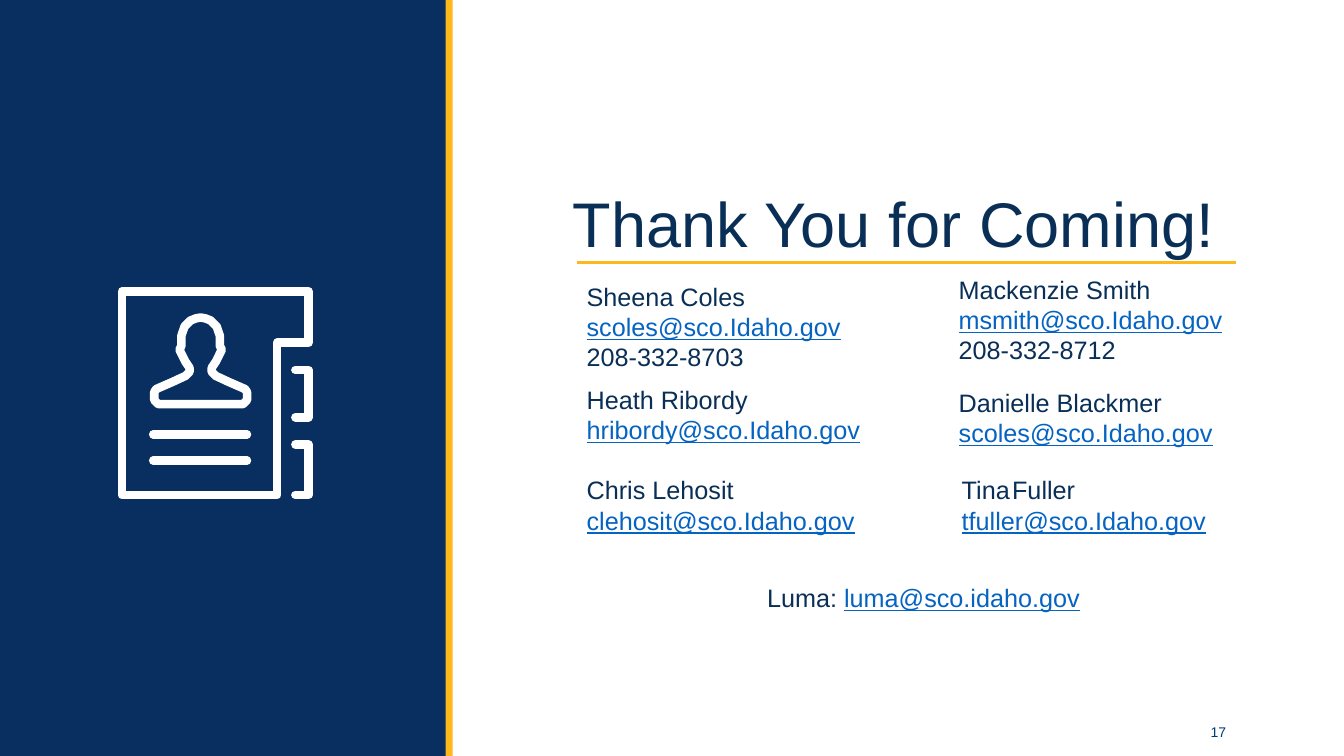
import dataclasses

import lxml.etree
import pptx
import pptx.dml.color
import pptx.enum.shapes
import pptx.enum.text
import pptx.oxml.ns
import pptx.util

Inches = pptx.util.Inches
Pt = pptx.util.Pt
qn = pptx.oxml.ns.qn


@dataclasses.dataclass(frozen=True)
class Theme:
    font: str = "Arial"
    panel: str = "092F61"
    gold: str = "FFB81C"
    ink: str = "092F57"
    email: str = "0563C1"
    number: str = "003B79"
    white: str = "FFFFFF"
    title_size: float = 45
    contact_size: float = 18
    number_size: float = 10
    rule_width: float = 2.25
    icon_stroke: float = 6.1


THEME = Theme()

CONTACTS = [
    ((5.72, 2.74, 3.12, 1.01), ["Sheena Coles", "scoles@sco.Idaho.gov", "208-332-8703"]),
    ((9.41, 2.67, 2.99, 1.01), ["Mackenzie Smith", "msmith@sco.Idaho.gov", "208-332-8712"]),
    ((5.72, 3.76, 3.12, 1.01), ["Heath Ribordy", "hribordy@sco.Idaho.gov"]),
    ((9.41, 3.79, 3.12, 1.01), ["Danielle Blackmer", "scoles@sco.Idaho.gov"]),
    ((5.72, 4.66, 3.12, 1.01), ["Chris Lehosit", "clehosit@sco.Idaho.gov"]),
    ((9.44, 4.66, 3.12, 1.01), ["Tina\tFuller", "tfuller@sco.Idaho.gov"]),
    ((7.51, 5.73, 3.36, 0.4), ["Luma: luma@sco.idaho.gov"]),
]


def rgb(value):
    return pptx.dml.color.RGBColor.from_string(value)


def style(font, size, color):
    font.name = THEME.font
    font.size = Pt(size)
    font.color.rgb = rgb(color)


def add_band(slide, box, color):
    band = slide.shapes.add_shape(
        pptx.enum.shapes.MSO_SHAPE.RECTANGLE, *map(Inches, box))
    band.shadow.inherit = False
    band.fill.solid()
    band.fill.fore_color.rgb = rgb(color)
    band.line.fill.background()


def add_side_panel(slide, box):
    left, top, width, height = box
    add_band(slide, box, THEME.panel)
    add_band(slide, (left + width - 0.01, top, 0.07, height), THEME.gold)


def add_stroke(slide, origin, points, close=False):
    left, top = origin
    outline = [(Inches(left + x), Inches(top + y)) for x, y in points]
    builder = slide.shapes.build_freeform(*outline[0])
    builder.add_line_segments(outline[1:], close=close)
    stroke = builder.convert_to_shape()
    stroke.shadow.inherit = False
    stroke.fill.background()
    stroke.line.color.rgb = rgb(THEME.white)
    stroke.line.width = Pt(THEME.icon_stroke)
    line = stroke.line._get_or_add_ln()
    line.set("cap", "rnd")
    lxml.etree.SubElement(line, qn("a:round"))


def add_address_book(slide, origin):
    card = [(0.04, 0.04), (1.89, 0.04), (1.89, 0.55),
            (1.58, 0.55), (1.58, 2.06), (0.04, 2.06)]
    add_stroke(slide, origin, card, close=True)

    for y in (1.46, 1.72):
        add_stroke(slide, origin, [(0.35, y), (1.28, y)])

    for top, bottom in ((0.82, 1.29), (1.56, 2.06)):
        add_stroke(slide, origin,
                   [(1.76, top), (1.89, top), (1.89, bottom), (1.76, bottom)])

    axis = 0.82
    half = [(0, 0.3), (0.05, 0.31), (0.1, 0.33), (0.16, 0.39), (0.19, 0.48),
            (0.19, 0.58), (0.21, 0.62), (0.18, 0.68), (0.15, 0.74),
            (0.11, 0.8), (0.11, 0.84), (0.15, 0.88), (0.28, 0.94),
            (0.44, 1.01), (0.46, 1.04), (0.46, 1.12), (0.42, 1.16)]
    person = [(axis + dx, y) for dx, y in half]
    person += [(axis - dx, y) for dx, y in reversed(half[1:])]
    add_stroke(slide, origin, person, close=True)


def add_heading(slide, box):
    left, top, width, height = box
    heading = slide.shapes.title
    heading.left, heading.top, heading.width, heading.height = map(Inches, box)
    frame = heading.text_frame
    frame.text = "Thank You for Coming!"
    frame.word_wrap = True
    frame.auto_size = pptx.enum.text.MSO_AUTO_SIZE.NONE
    frame.vertical_anchor = pptx.enum.text.MSO_ANCHOR.MIDDLE
    frame.margin_left = frame.margin_right = 0
    line = frame.paragraphs[0]
    line.alignment = pptx.enum.text.PP_ALIGN.CENTER
    line.line_spacing = 0.9
    style(line.runs[0].font, THEME.title_size, THEME.ink)

    rule_y = Inches(top + 0.77)
    rule = slide.shapes.add_connector(
        pptx.enum.shapes.MSO_CONNECTOR.STRAIGHT,
        Inches(left + 0.41), rule_y, Inches(left + width - 0.15), rule_y)
    rule.line.color.rgb = rgb(THEME.gold)
    rule.line.width = Pt(THEME.rule_width)
    lxml.etree.SubElement(rule._element.spPr, qn("a:effectLst"))


def add_tab_stop(paragraph, position):
    stops = lxml.etree.SubElement(paragraph._p.get_or_add_pPr(), qn("a:tabLst"))
    lxml.etree.SubElement(stops, qn("a:tab"), pos=str(Inches(position)), algn="l")


def add_contact(slide, box, lines):
    frame = slide.shapes.add_textbox(*map(Inches, box)).text_frame
    frame.word_wrap = True
    for index, text in enumerate(lines):
        line = frame.paragraphs[0] if index == 0 else frame.add_paragraph()
        if "\t" in text:
            add_tab_stop(line, 0.5)
        label, separator, address = text.rpartition(": ")
        for part in filter(None, (label + separator, address)):
            run = line.add_run()
            run.text = part
            is_email = "@" in part
            style(run.font, THEME.contact_size,
                  THEME.email if is_email else THEME.ink)
            run.font.underline = is_email


def add_page_number(slide, box):
    frame = slide.shapes.add_textbox(*map(Inches, box)).text_frame
    frame.text = "17"
    frame.word_wrap = True
    frame.vertical_anchor = pptx.enum.text.MSO_ANCHOR.MIDDLE
    number = frame.paragraphs[0]
    number.alignment = pptx.enum.text.PP_ALIGN.RIGHT
    style(number.runs[0].font, THEME.number_size, THEME.number)


def build_closing_slide(deck):
    slide = deck.slides.add_slide(deck.slide_layouts.get_by_name("Title Only"))
    add_side_panel(slide, (0, 0, 4.43, 7.5))
    add_heading(slide, (5.31, 1.83, 7.1, 0.84))
    for box, lines in CONTACTS:
        add_contact(slide, box, lines)
    add_address_book(slide, (1.17, 2.85))
    add_page_number(slide, (10.83, 7.06, 1.43, 0.4))


def main():
    deck = pptx.Presentation()
    deck.slide_width = Inches(13.33)
    deck.slide_height = Inches(7.5)
    build_closing_slide(deck)
    deck.save("out.pptx")


if __name__ == "__main__":
    main()
